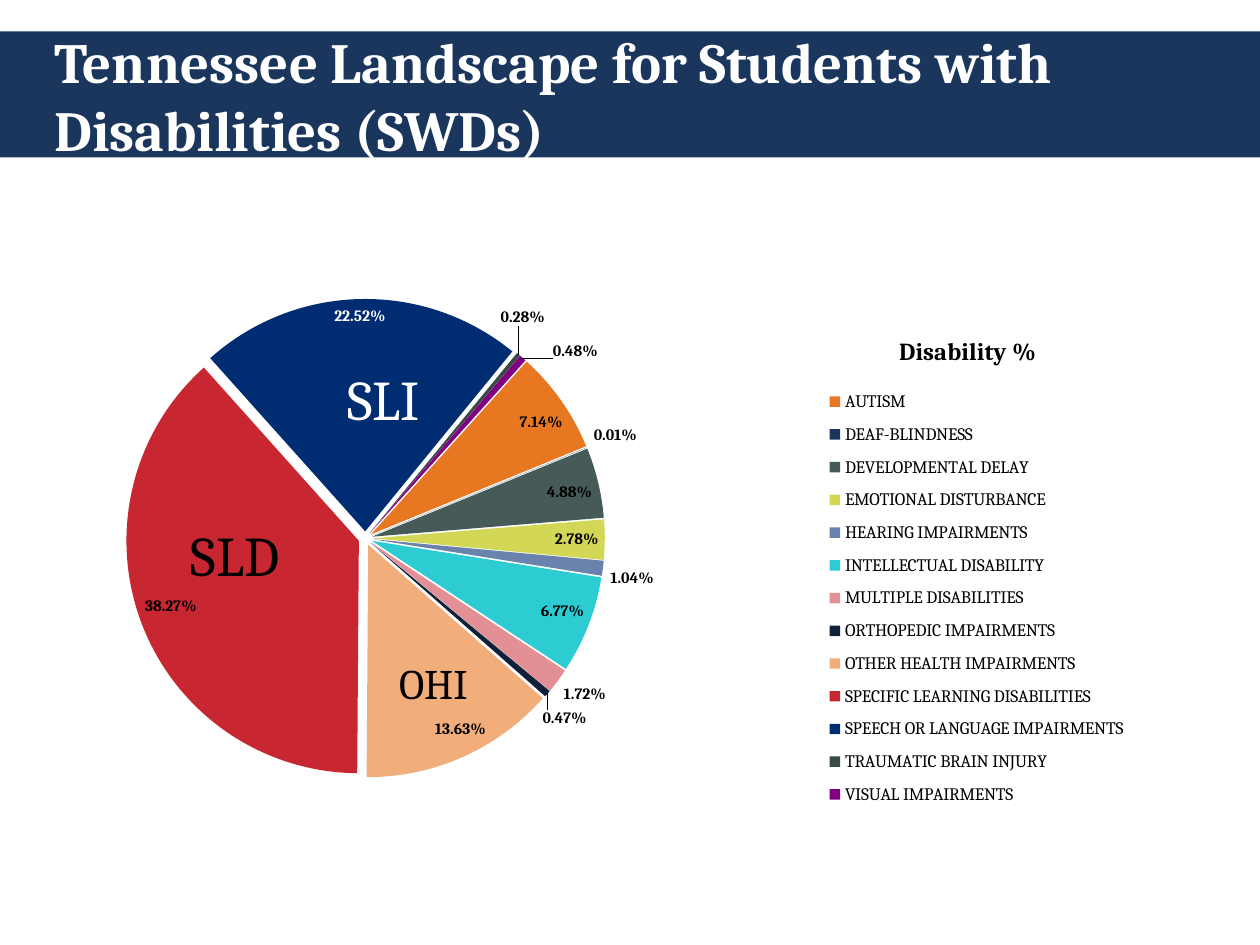
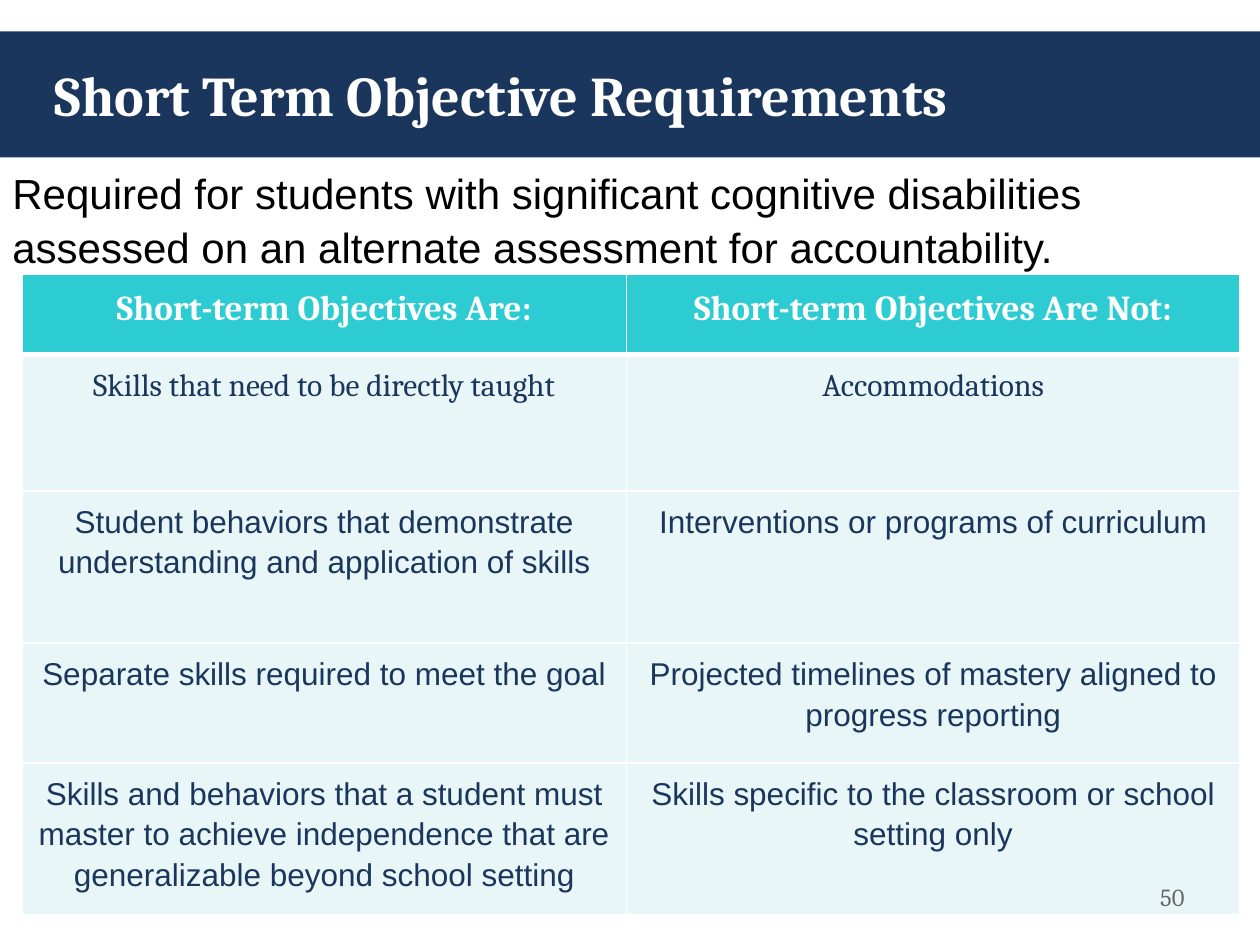
from lxml.etree import SubElement
from pptx import Presentation
from pptx.chart.data import CategoryChartData
from pptx.dml.color import RGBColor
from pptx.enum.chart import XL_CHART_TYPE, XL_LABEL_POSITION, XL_LEGEND_POSITION
from pptx.enum.shapes import MSO_SHAPE
from pptx.enum.text import MSO_ANCHOR, MSO_AUTO_SIZE, PP_ALIGN
from pptx.oxml import parse_xml
from pptx.oxml.ns import nsdecls, qn
from pptx.util import Pt

NAVY = RGBColor(0x1B, 0x36, 0x5D)
BLUE = RGBColor(0x00, 0x2D, 0x72)
RED = RGBColor(0xC8, 0x26, 0x30)
ORANGE = RGBColor(0xE8, 0x77, 0x22)
SLATE = RGBColor(0x46, 0x5B, 0x58)
LIME = RGBColor(0xD2, 0xD7, 0x55)
TURQUOISE = RGBColor(0x2D, 0xCC, 0xD3)
MIDNIGHT = RGBColor(0x10, 0x20, 0x38)
PEACH = RGBColor(0xF1, 0xAD, 0x7A)
DARK_SLATE = RGBColor(0x38, 0x49, 0x46)
PURPLE = RGBColor(0x80, 0x00, 0x80)
PALE = RGBColor(0xE8, 0xF6, 0xF7)
GRAY = RGBColor(0x66, 0x66, 0x66)
WHITE = RGBColor(0xFF, 0xFF, 0xFF)
BLACK = RGBColor(0x00, 0x00, 0x00)
SERIF, SANS = "Cambria", "Arial"

LANDSCAPE_TITLE = "Tennessee Landscape for Students with Disabilities (SWDs)"
DISABILITIES = [
    ("AUTISM", 7.14, ORANGE, 100),
    ("DEAF-BLINDNESS", 0.01, NAVY, 100),
    ("DEVELOPMENTAL DELAY", 4.88, SLATE, 100),
    ("EMOTIONAL DISTURBANCE", 2.78, LIME, 100),
    ("HEARING IMPAIRMENTS", 1.04, BLUE, 59),
    ("INTELLECTUAL DISABILITY", 6.77, TURQUOISE, 100),
    ("MULTIPLE DISABILITIES", 1.72, RED, 51),
    ("ORTHOPEDIC IMPAIRMENTS", 0.47, MIDNIGHT, 100),
    ("OTHER HEALTH IMPAIRMENTS", 13.63, PEACH, 100),
    ("SPECIFIC LEARNING DISABILITIES", 38.27, RED, 100),
    ("SPEECH OR LANGUAGE IMPAIRMENTS", 22.52, BLUE, 100),
    ("TRAUMATIC BRAIN INJURY", 0.28, DARK_SLATE, 100),
    ("VISUAL IMPAIRMENTS", 0.48, PURPLE, 100),
]
SPEECH_INDEX, VISUAL_INDEX = 10, 12
SLICE_NAMES = [
    ("SLD", (102, 294, 72, 46), 32, BLACK),
    ("SLI", (191.5, 204.5, 60.5, 46), 32, WHITE),
    ("OHI", (221, 372, 61, 36), 24, BLACK),
]
OBJECTIVES_TITLE = "Short Term Objective Requirements"
REQUIREMENT = ("Required for students with significant cognitive disabilities "
               "assessed on an alternate assessment for accountability.")
OBJECTIVES = [
    ("Short-term Objectives Are:", "Short-term Objectives Are Not:"),
    ("Skills that need to be directly taught", "Accommodations"),
    ("Student behaviors that demonstrate understanding and application of skills",
     "Interventions or programs of curriculum"),
    ("Separate skills required to meet the goal",
     "Projected timelines of mastery aligned to progress reporting"),
    ("Skills and behaviors that a student must master to achieve independence "
     "that are generalizable beyond school setting",
     "Skills specific to the classroom or school setting only"),
]
COLUMN_WIDTHS = (345.5, 350.5)
ROW_HEIGHTS = (46, 78, 87, 68.5, 87)


def set_font(font, size, color, name=SERIF, bold=False):
    """Apply size, colour, typeface and weight to a font."""
    font.size, font.name, font.bold = Pt(size), name, bold
    font.color.rgb = color


def write_text(frame, text, size=18, color=BLACK, name=SERIF, bold=False,
               align=PP_ALIGN.LEFT, spacing=None):
    """Write one formatted paragraph into a text frame."""
    frame.word_wrap = True
    paragraph = frame.paragraphs[0]
    paragraph.alignment, paragraph.line_spacing = align, spacing
    run = paragraph.add_run()
    run.text = text
    set_font(run.font, size, color, name, bold)


def add_text(slide, text, box, **text_format):
    """Add a text box at a place given in points."""
    shape = slide.shapes.add_textbox(*map(Pt, box))
    write_text(shape.text_frame, text, **text_format)


def add_titled_slide(presentation, title, size):
    """Add a slide with the navy band and its title."""
    slide = presentation.slides.add_slide(presentation.slide_layouts[5])
    band = slide.shapes.add_shape(MSO_SHAPE.RECTANGLE, 0, Pt(18), Pt(720), Pt(72))
    band.shadow.inherit = False
    band.fill.solid()
    band.fill.fore_color.rgb = NAVY
    band.line.fill.background()
    placeholder = slide.shapes.title
    band._element.addnext(placeholder._element)
    placeholder.left, placeholder.top = Pt(24), Pt(18)
    placeholder.width, placeholder.height = Pt(654), Pt(72)
    frame = placeholder.text_frame
    frame.auto_size, frame.vertical_anchor = MSO_AUTO_SIZE.NONE, MSO_ANCHOR.MIDDLE
    write_text(frame, title, size=size, color=WHITE, bold=True)
    return slide


def chart_layout(x, y, width=None, height=None, inner=False, edge=True):
    """Return a manual layout in fractions of the chart."""
    layout = parse_xml(f"<c:layout {nsdecls('c')}><c:manualLayout/></c:layout>")
    settings = [("layoutTarget", "inner" if inner else None),
                ("xMode", "edge" if edge else None), ("yMode", "edge" if edge else None),
                ("x", x), ("y", y), ("w", width), ("h", height)]
    for tag, value in settings:
        if value is not None:
            SubElement(layout[0], qn(f"c:{tag}")).set("val", str(value))
    return layout


def format_slice_label(point, color, offset=None):
    """Show one slice's percentage in its own colour, optionally moved."""
    label = point.data_label
    set_font(label.font, 9, color, bold=True)
    label.position = XL_LABEL_POSITION.BEST_FIT
    element = label._dLbl
    element.find(qn("c:showVal")).set("val", "0")
    element.find(qn("c:showPercent")).set("val", "1")
    element[0].addnext(parse_xml(
        f'<c:numFmt {nsdecls("c")} formatCode="0.00%" sourceLinked="0"/>'))
    if offset:
        element[0].addnext(chart_layout(*offset, edge=False))


def add_disability_pie(slide):
    """Add the exploded pie of disability shares."""
    data = CategoryChartData()
    data.categories = [entry[0] for entry in DISABILITIES]
    data.add_series("Series 1", [entry[1] for entry in DISABILITIES])
    chart = slide.shapes.add_chart(
        XL_CHART_TYPE.PIE, 0, Pt(66), Pt(720), Pt(456), data).chart
    set_font(chart.font, 10, NAVY)

    chart.has_title = True
    write_text(chart.chart_title.text_frame, "Disability %", size=14, bold=True)
    title = chart.chart_title._element
    for old_layout in title.findall(qn("c:layout")):
        title.remove(old_layout)
    title.find(qn("c:tx")).addnext(chart_layout(0.71, 0.27))

    chart.has_legend = True
    legend = chart.legend
    legend.position, legend.include_in_layout = XL_LEGEND_POSITION.RIGHT, False
    set_font(legend.font, 10, BLACK)
    for old_layout in legend._element.findall(qn("c:layout")):
        legend._element.remove(old_layout)
    legend._element.find(qn("c:legendPos")).addnext(
        chart_layout(0.65, 0.33, 0.25, 0.55))

    plot = chart.plots[0]
    plot.vary_by_categories = True
    plot_area = plot._element.getparent()
    for old_layout in plot_area.findall(qn("c:layout")):
        plot_area.remove(old_layout)
    plot_area.insert(0, chart_layout(0.1, 0.17, 0.38, 0.72, inner=True))
    for old_angle in plot._element.findall(qn("c:firstSliceAng")):
        plot._element.remove(old_angle)
    SubElement(plot._element, qn("c:firstSliceAng")).set("val", "42")

    series = plot.series[0]
    series._element.find(qn("c:tx")).addnext(
        parse_xml(f'<c:explosion {nsdecls("c")} val="3"/>'))
    for index, (_, _, color, opacity) in enumerate(DISABILITIES):
        fill = series.points[index].format.fill
        fill.solid()
        fill.fore_color.rgb = color
        if opacity < 100:
            color_element = next(series.points[index]._element.iter(qn("c:dPt")), None)
            for point in series._element.findall(qn("c:dPt")):
                if point.find(qn("c:idx")).get("val") == str(index):
                    color_element = next(point.iter(qn("a:srgbClr")))
            SubElement(color_element, qn("a:alpha")).set("val", str(opacity * 1000))

    labels = series.data_labels
    labels.show_percentage, labels.show_value = True, False
    labels.number_format, labels.number_format_is_linked = "0.00%", False
    labels.position = XL_LABEL_POSITION.BEST_FIT
    set_font(labels.font, 9, BLACK, bold=True)
    format_slice_label(series.points[SPEECH_INDEX], WHITE)
    format_slice_label(series.points[VISUAL_INDEX], BLACK, offset=(0.02, 0.01))


def set_borders(cell, bottom_width):
    """Draw white borders round a cell."""
    properties = cell._tc.get_or_add_tcPr()
    widths = {"lnL": 1, "lnR": 1, "lnT": 1, "lnB": bottom_width}
    for position, (tag, width) in enumerate(widths.items()):
        properties.insert(position, parse_xml(
            f'<a:{tag} {nsdecls("a")} w="{Pt(width)}"><a:solidFill>'
            f'<a:srgbClr val="{WHITE}"/></a:solidFill></a:{tag}>'))


def add_objectives_table(slide):
    """Add the table of what short-term objectives are and are not."""
    table = slide.shapes.add_table(
        len(OBJECTIVES), len(COLUMN_WIDTHS), Pt(12.5), Pt(156.5),
        Pt(sum(COLUMN_WIDTHS)), Pt(sum(ROW_HEIGHTS))).table
    for column, width in zip(table.columns, COLUMN_WIDTHS):
        column.width = Pt(width)
    for row_index, (row, height) in enumerate(zip(table.rows, ROW_HEIGHTS)):
        row.height = Pt(height)
        header = row_index == 0
        for cell, text in zip(row.cells, OBJECTIVES[row_index]):
            cell.margin_left = cell.margin_right = Pt(5)
            cell.margin_top = cell.margin_bottom = Pt(5)
            cell.fill.solid()
            cell.fill.fore_color.rgb = TURQUOISE if header else PALE
            set_borders(cell, 3 if header else 1)
            write_text(cell.text_frame, text, size=20 if header else 18,
                       color=WHITE if header else NAVY, bold=header,
                       name=SERIF if row_index < 2 else SANS,
                       align=PP_ALIGN.CENTER, spacing=1.15)


def main():
    """Build and save the two slides."""
    presentation = Presentation()
    presentation.slide_width, presentation.slide_height = Pt(720), Pt(540)

    landscape = add_titled_slide(presentation, LANDSCAPE_TITLE, 32.4)
    add_disability_pie(landscape)
    for text, box, size, color in SLICE_NAMES:
        add_text(landscape, text, box, size=size, color=color)

    objectives = add_titled_slide(presentation, OBJECTIVES_TITLE, 32)
    add_objectives_table(objectives)
    add_text(objectives, "50", (648, 500.5, 36, 29), size=14, color=GRAY,
             align=PP_ALIGN.RIGHT)
    add_text(objectives, REQUIREMENT, (0, 90, 696, 60), size=24, name=SANS,
             spacing=1.07)
    presentation.save("out.pptx")


if __name__ == "__main__":
    main()
